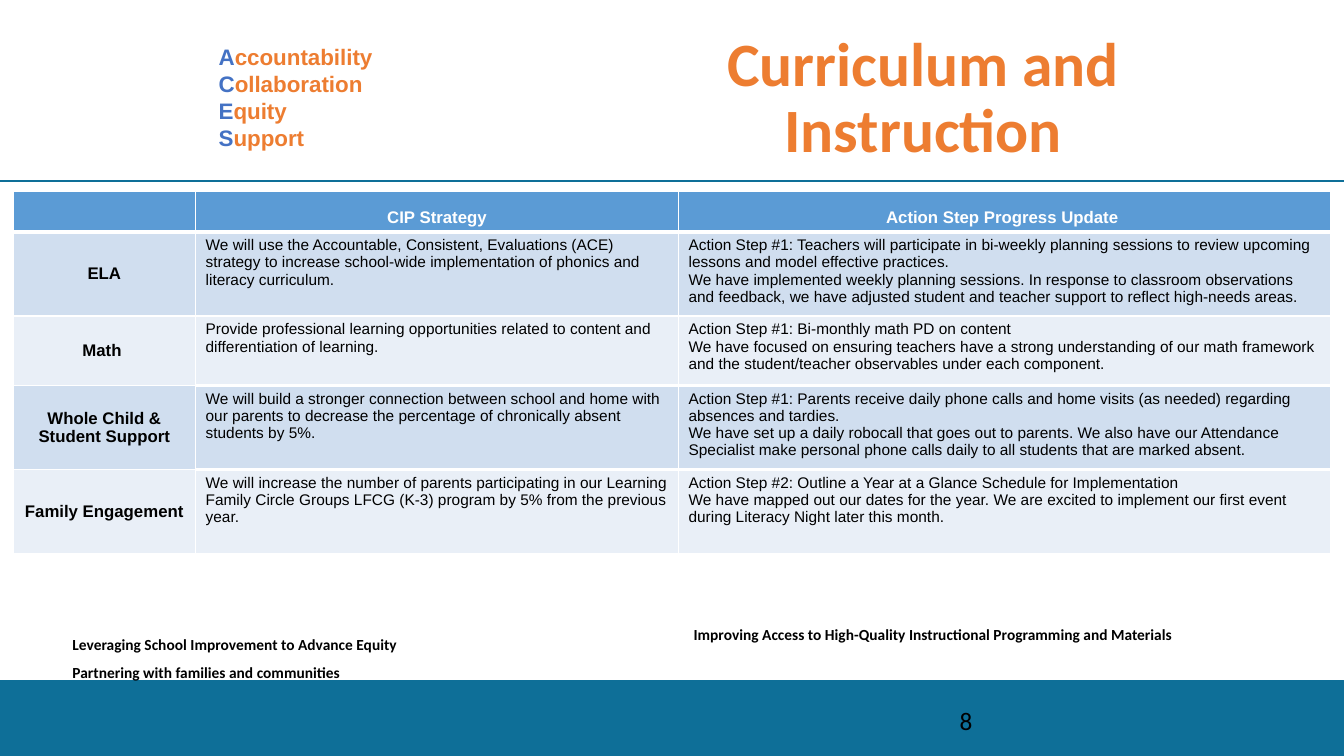
"""Builds the Curriculum and Instruction progress slide."""
from dataclasses import dataclass

from lxml.etree import SubElement
from pptx import Presentation
from pptx.dml.color import RGBColor
from pptx.enum.shapes import MSO_CONNECTOR, MSO_SHAPE
from pptx.enum.text import MSO_ANCHOR, MSO_AUTO_SIZE, PP_ALIGN
from pptx.oxml.ns import qn
from pptx.util import Inches, Pt


@dataclass(frozen=True)
class Theme:
    """Colours, fonts and type sizes of the slide."""
    band: str = "0E6F98"
    orange: str = "ED7D31"
    blue: str = "4472C4"
    header: str = "5B9BD5"
    odd_row: str = "D0DEEF"
    even_row: str = "E9EFF7"
    white: str = "FFFFFF"
    black: str = "000000"
    heading_font: str = "Calibri"
    body_font: str = "Arial"
    title_size: int = 44
    number_size: int = 18
    values_size: int = 16
    label_size: int = 12
    body_size: int = 11


THEME = Theme()
VALUES = ["Accountability", "Collaboration", "Equity", "Support"]
COLUMN_WIDTHS = [1.81, 4.79, 6.47]
ROW_HEIGHTS = [0.4, 0.83, 0.69, 0.83, 0.83]
HEAVY_RULE_ROWS = (2, 3)
ROWS = [
    ("", "CIP Strategy", "Action Step Progress Update "),
    ("ELA",
     "We will use the Accountable, Consistent, Evaluations (ACE) strategy to increase "
     "school-wide implementation of phonics and literacy curriculum.",
     "Action Step #1: Teachers will participate in bi-weekly planning sessions to review "
     "upcoming lessons and model effective practices.\n"
     "We have implemented weekly planning sessions. In response to classroom observations "
     "and feedback, we have adjusted student and teacher support to reflect high-needs areas."),
    ("Math ",
     "Provide professional learning opportunities related to content and differentiation "
     "of learning.",
     "Action Step #1: Bi-monthly math PD on content\n"
     "We have focused on ensuring teachers have a strong understanding of our math framework "
     "and the student/teacher observables under each component."),
    ("Whole Child & Student Support",
     "We will build a stronger connection between school and home with our parents to "
     "decrease the percentage of chronically absent students by 5%.",
     "Action Step #1: Parents receive daily phone calls and home visits (as needed) regarding "
     "absences and tardies.\n"
     "We have set up a daily robocall that goes out to parents. We also have our Attendance "
     "Specialist make personal phone calls daily to all students that are marked absent."),
    ("Family Engagement ",
     "We will increase the number of parents participating in our Learning Family Circle "
     "Groups LFCG (K-3) program by 5% from the previous year.",
     "Action Step #2: Outline a Year at a Glance Schedule for Implementation\n"
     "We have mapped out our dates for the year. We are excited to implement our first event "
     "during Literacy Night later this month."),
]


def style_span(span, font, size, color, bold):
    """Give one run its font, size, colour and weight."""
    span.font.name = font
    span.font.size = Pt(size)
    span.font.bold = bold
    span.font.color.rgb = RGBColor.from_string(color)


def style_frame(frame, font, size, color, bold=False, align=PP_ALIGN.LEFT, spacing=None):
    """Format every paragraph and run of a text frame alike."""
    for para in frame.paragraphs:
        para.alignment = align
        if spacing:
            para.line_spacing = spacing
        for span in para.runs:
            style_span(span, font, size, color, bold)


def place(shape, left, top, width, height):
    """Move and size a shape in inches."""
    shape.left, shape.top = Inches(left), Inches(top)
    shape.width, shape.height = Inches(width), Inches(height)


def add_title(page, text):
    """Fill and format the title placeholder."""
    title = page.shapes.title
    place(title, 6.23, 0.28, 5.86, 1.5)
    frame = title.text_frame
    frame.text = text
    frame.auto_size = MSO_AUTO_SIZE.NONE
    frame.vertical_anchor = MSO_ANCHOR.TOP
    style_frame(frame, THEME.heading_font, THEME.title_size, THEME.orange, True,
                PP_ALIGN.CENTER, 0.9)


def add_frame(page, position, inset=0.1):
    """Add a wrapping text box and return its text frame."""
    box = page.shapes.add_textbox(*map(Inches, position))
    frame = box.text_frame
    frame.word_wrap = True
    frame.margin_top = frame.margin_bottom = Inches(inset)
    return frame


def add_footnote(page, position, text, spacing=None):
    """Add bold priorities above the footer band."""
    frame = add_frame(page, position)
    frame.text = text
    style_frame(frame, THEME.heading_font, THEME.body_size, THEME.black, True, spacing=spacing)


def add_values(page):
    """List the core values with a blue initial on each."""
    frame = add_frame(page, (2.07, 0.33, 3.96, 1.28))
    frame.text = "\n".join(value[0] for value in VALUES)
    style_frame(frame, THEME.body_font, THEME.values_size, THEME.blue, True)
    for para, value in zip(frame.paragraphs, VALUES):
        span = para.add_run()
        span.text = value[1:]
        style_span(span, THEME.body_font, THEME.values_size, THEME.orange, True)


def add_page_number(page, number):
    """Write the slide number on the footer band."""
    frame = add_frame(page, (9.42, 6.95, 3, 0.4), 0.05)
    frame.text = number
    frame.vertical_anchor = MSO_ANCHOR.MIDDLE
    style_frame(frame, THEME.heading_font, THEME.number_size, THEME.black)


def add_band(page):
    """Draw the footer band and the rule below the heading."""
    color = RGBColor.from_string(THEME.band)
    band = page.shapes.add_shape(MSO_SHAPE.RECTANGLE, 0, Inches(6.75), Inches(13.33), Inches(0.75))
    band.shadow.inherit = False
    band.fill.solid()
    band.fill.fore_color.rgb = color
    band.line.color.rgb = color
    band.line.width = Pt(0.75)
    rule = page.shapes.add_connector(MSO_CONNECTOR.STRAIGHT, 0, Inches(1.8),
                                     Inches(13.33), Inches(1.8))
    rule.line.color.rgb = color
    rule.line.width = Pt(1.5)
    SubElement(rule._element.spPr, qn("a:effectLst"))


def bottom_weight(row, column):
    """Return the border weight in points below a cell."""
    return 3 if row == 0 or (row in HEAVY_RULE_ROWS and column > 0) else 1


def set_borders(cell, row, column):
    """Draw white borders around a cell."""
    top = bottom_weight(row - 1, column) if row > 1 else 1
    weights = {"a:lnL": 1, "a:lnR": 1, "a:lnT": top, "a:lnB": bottom_weight(row, column)}
    properties = cell._tc.get_or_add_tcPr()
    for tag, weight in weights.items():
        line = SubElement(properties, qn(tag), w=str(Pt(weight)))
        fill = SubElement(line, qn("a:solidFill"))
        SubElement(fill, qn("a:srgbClr"), val=THEME.white)


def fill_cell(cell, row, column, text):
    """Write and format one table cell."""
    set_borders(cell, row, column)
    shade = THEME.header if row == 0 else (THEME.odd_row if row % 2 else THEME.even_row)
    cell.fill.solid()
    cell.fill.fore_color.rgb = RGBColor.from_string(shade)
    cell.text_frame.text = text
    label = row == 0 or column == 0
    if label:
        cell.vertical_anchor = MSO_ANCHOR.BOTTOM if row == 0 else MSO_ANCHOR.MIDDLE
    style_frame(cell.text_frame, THEME.body_font,
                THEME.label_size if label else THEME.body_size,
                THEME.white if row == 0 else THEME.black, label,
                PP_ALIGN.CENTER if label else PP_ALIGN.LEFT)


def add_progress_table(page):
    """Add the table of strategies and progress updates."""
    table = page.shapes.add_table(len(ROWS), len(COLUMN_WIDTHS), Inches(0.13), Inches(1.9),
                                  Inches(sum(COLUMN_WIDTHS)), Inches(sum(ROW_HEIGHTS))).table
    for column, width in enumerate(COLUMN_WIDTHS):
        table.columns[column].width = Inches(width)
    for row, (height, texts) in enumerate(zip(ROW_HEIGHTS, ROWS)):
        table.rows[row].height = Inches(height)
        for column, text in enumerate(texts):
            fill_cell(table.cell(row, column), row, column, text)


def main():
    """Build and save the deck."""
    deck = Presentation()
    deck.slide_width, deck.slide_height = Inches(13.33), Inches(7.5)
    page = deck.slides.add_slide(deck.slide_layouts[5])
    add_band(page)
    add_title(page, "Curriculum and Instruction")
    add_footnote(page, (0.62, 6.11, 6.14, 0.99),
                 "Leveraging School Improvement to Advance Equity\n"
                 "Partnering with families and communities", 1.5)
    add_footnote(page, (6.78, 6.11, 6.62, 0.62),
                 "Improving Access to High-Quality Instructional Programming and Materials")
    add_values(page)
    add_page_number(page, "8")
    add_progress_table(page)
    deck.save("out.pptx")


if __name__ == "__main__":
    main()
